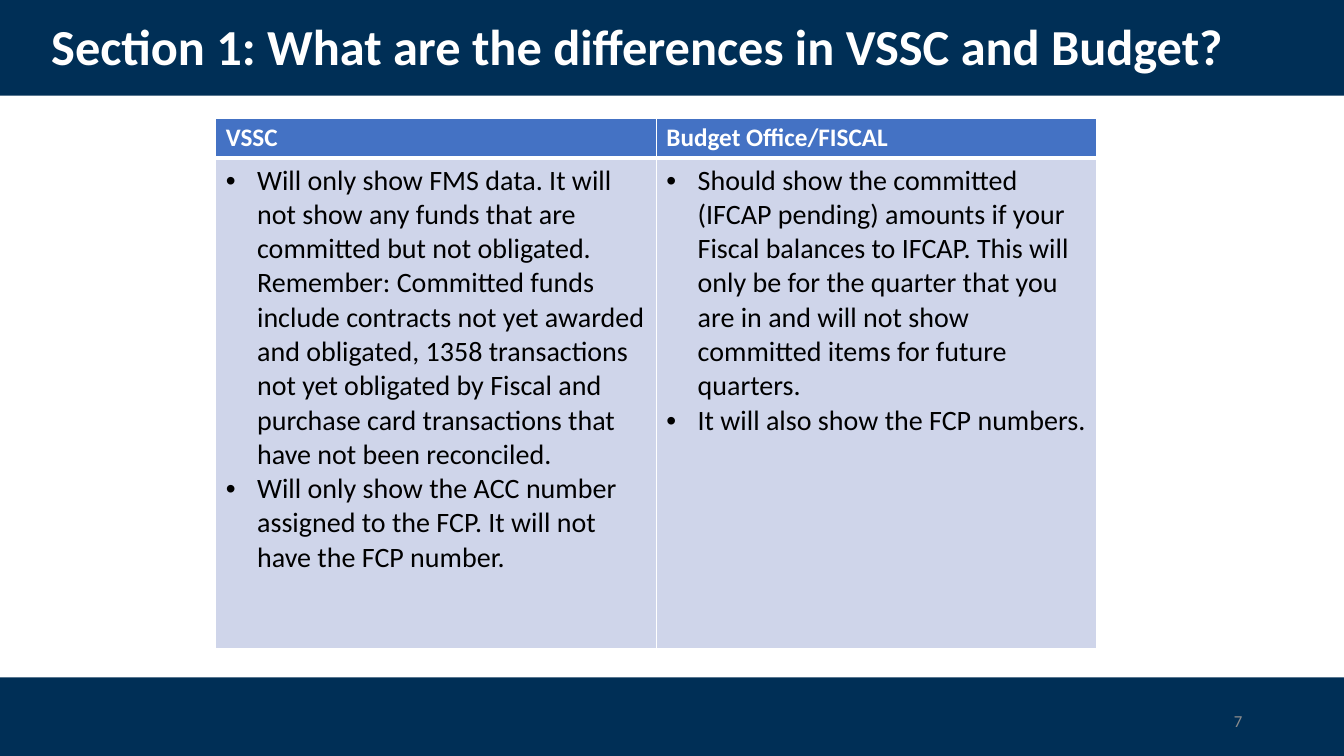
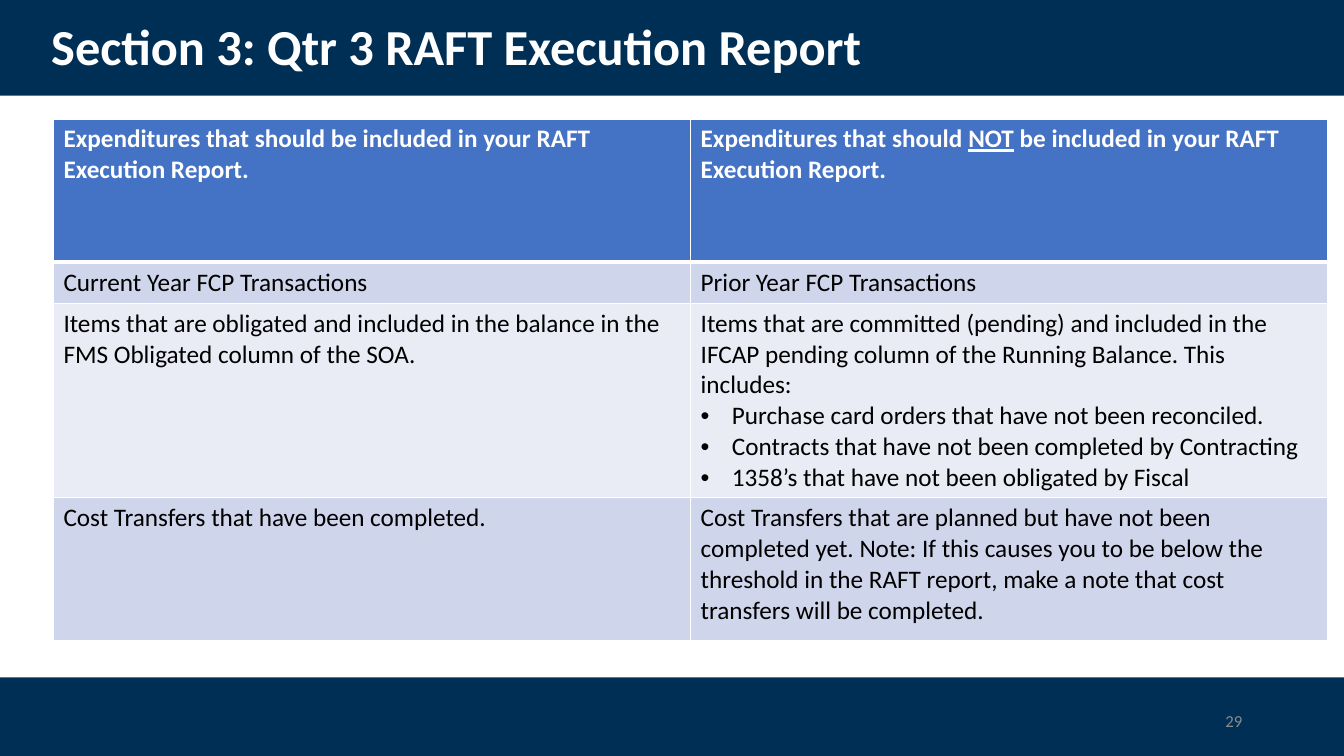
"""Build two slides that compare budget reports in banded tables."""
from lxml.etree import SubElement
from pptx import Presentation
from pptx.dml.color import RGBColor
from pptx.enum.shapes import MSO_SHAPE
from pptx.enum.text import MSO_ANCHOR as Anchor, PP_ALIGN as Align
from pptx.oxml.ns import qn
from pptx.util import Inches, Pt

WIDTH, HEIGHT = Inches(13.33), Inches(7.5)
NAVY = RGBColor(0x00, 0x2F, 0x56)
BLUE = RGBColor(0x44, 0x72, 0xC4)
BAND_DARK = RGBColor(0xCF, 0xD5, 0xEA)
BAND_LIGHT = RGBColor(0xE9, 0xEB, 0xF5)
WHITE = RGBColor(0xFF, 0xFF, 0xFF)
BLACK = RGBColor(0x00, 0x00, 0x00)
GREY = RGBColor(0x8C, 0x8C, 0x8C)

TITLE_FONT = {"name": "Calibri", "size": Pt(36), "bold": True}
NUMBER_FONT = {"name": "Calibri", "size": Pt(12), "bold": False}
HEADER_FONT = {"name": "Calibri", "size": Pt(18), "bold": True}
BULLET = "• "
HANG = Inches(0.31)
THIN, THICK = Pt(1), Pt(3)

SLIDES = [
    {
        "title": "Section 1: What are the differences in VSSC and Budget?",
        "number": "7",
        "corner": (2.14, 1.17),
        "column": 4.37,
        "heights": [0.4, 4.86],
        "body_size": 20,
        "rows": [
            [["VSSC"], ["Budget Office/FISCAL"]],
            [
                [
                    "• Will only show FMS data. It will not show any funds that are committed but not "
                    "obligated. Remember: Committed funds include contracts not yet awarded and "
                    "obligated, 1358 transactions not yet obligated by Fiscal and purchase card "
                    "transactions that have not been reconciled.",
                    "• Will only show the ACC number assigned to the FCP. It will not have the FCP number.",
                ],
                [
                    "• Should show the committed (IFCAP pending) amounts if your Fiscal balances to "
                    "IFCAP. This will only be for the quarter that you are in and will not show "
                    "committed items for future quarters.",
                    "• It will also show the FCP numbers.",
                ],
            ],
        ],
    },
    {
        "title": "Section 3: Qtr 3 RAFT Execution Report",
        "number": "29",
        "corner": (0.53, 1.18),
        "column": 6.32,
        "heights": [1.42, 0.41, 1.93, 1.42],
        "body_size": 18,
        "rows": [
            [
                ["Expenditures that should be included in your RAFT Execution Report."],
                ["Expenditures that should _NOT_ be included in your RAFT Execution Report."],
            ],
            [["Current Year FCP Transactions"], ["Prior Year FCP Transactions"]],
            [
                ["Items that are obligated and included in the balance in the FMS Obligated column of the SOA."],
                [
                    "Items that are committed (pending) and included in the IFCAP pending column of "
                    "the Running Balance. This includes:",
                    "• Purchase card orders that have not been reconciled.",
                    "• Contracts that have not been completed by Contracting",
                    "• 1358’s that have not been obligated by Fiscal",
                ],
            ],
            [
                ["Cost Transfers that have been completed."],
                [
                    "Cost Transfers that are planned but have not been completed yet. Note: If this "
                    "causes you to be below the threshold in the RAFT report, make a note that cost "
                    "transfers will be completed.",
                ],
            ],
        ],
    },
]


def add_run(paragraph, text, font, color, underline=False):
    """Append a formatted run."""
    run = paragraph.add_run()
    run.text = text
    for name, value in font.items():
        setattr(run.font, name, value)
    run.font.color.rgb = color
    if underline:
        run.font.underline = True


def add_bullet(paragraph):
    """Give a paragraph a hanging round bullet."""
    properties = paragraph._p.get_or_add_pPr()
    properties.set("marL", str(HANG))
    properties.set("indent", str(-HANG))
    SubElement(properties, qn("a:buFont"), typeface="Arial")
    SubElement(properties, qn("a:buChar"), char=BULLET.strip())


def add_band(slide, top, height):
    """Draw a navy band across the slide."""
    band = slide.shapes.add_shape(MSO_SHAPE.RECTANGLE, 0, top, WIDTH, height)
    band.shadow.inherit = False
    band.fill.solid()
    band.fill.fore_color.rgb = NAVY
    band.line.fill.background()


def add_label(slide, box, text, font, color, **layout):
    """Place one line of text, centred vertically in its box."""
    frame = slide.shapes.add_textbox(*map(Inches, box)).text_frame
    frame.word_wrap = True
    frame.vertical_anchor = Anchor.MIDDLE
    paragraph = frame.paragraphs[0]
    for name, value in layout.items():
        setattr(paragraph, name, value)
    add_run(paragraph, text, font, color)


def add_frame(slide, title, number):
    """Add the bands, title and page number that all slides share."""
    add_band(slide, 0, Inches(0.95))
    add_band(slide, Inches(6.72), HEIGHT - Inches(6.72))
    add_label(slide, (0.41, 0.15, 12.56, 0.68), title, TITLE_FONT, WHITE, line_spacing=0.9)
    add_label(slide, (9.42, 6.95, 3, 0.4), number, NUMBER_FONT, GREY, alignment=Align.RIGHT)


def style_cell(cell, row, fill):
    """Set white borders, thick below the header, and the fill."""
    properties = cell._tc.get_or_add_tcPr()
    widths = {
        "lnL": THIN,
        "lnR": THIN,
        "lnT": THICK if row == 1 else THIN,
        "lnB": THICK if row == 0 else THIN,
    }
    for edge, width in widths.items():
        line = SubElement(properties, qn(f"a:{edge}"), w=str(width))
        solid = SubElement(line, qn("a:solidFill"))
        SubElement(solid, qn("a:srgbClr"), val=str(WHITE))
    cell.fill.solid()
    cell.fill.fore_color.rgb = fill


def fill_cell(cell, lines, font, color):
    """Write lines with bullets and underlined words marked by underscores."""
    frame = cell.text_frame
    for index, line in enumerate(lines):
        paragraph = frame.add_paragraph() if index else frame.paragraphs[0]
        if line.startswith(BULLET):
            add_bullet(paragraph)
        for part, text in enumerate(line.removeprefix(BULLET).split("_")):
            add_run(paragraph, text, font, color, underline=part % 2 == 1)


def add_comparison(slide, corner, column, heights, body_size, rows):
    """Add a two-column table with a header and banded rows."""
    left, top = map(Inches, corner)
    columns = len(rows[0])
    table = slide.shapes.add_table(
        len(rows), columns, left, top, Inches(column * columns), Inches(sum(heights))
    ).table
    body_font = {"name": "Calibri", "size": Pt(body_size), "bold": False}
    for row, (height, cells) in enumerate(zip(heights, rows)):
        table.rows[row].height = Inches(height)
        band = BAND_DARK if row % 2 else BAND_LIGHT
        fill, font, color = (band, body_font, BLACK) if row else (BLUE, HEADER_FONT, WHITE)
        for col, lines in enumerate(cells):
            cell = table.cell(row, col)
            style_cell(cell, row, fill)
            fill_cell(cell, lines, font, color)


def main():
    """Build and save the presentation."""
    deck = Presentation()
    deck.slide_width, deck.slide_height = WIDTH, HEIGHT
    blank = deck.slide_layouts[6]
    for content in SLIDES:
        slide = deck.slides.add_slide(blank)
        comparison = dict(content)
        add_frame(slide, comparison.pop("title"), comparison.pop("number"))
        add_comparison(slide, **comparison)
    deck.save("out.pptx")


if __name__ == "__main__":
    main()
